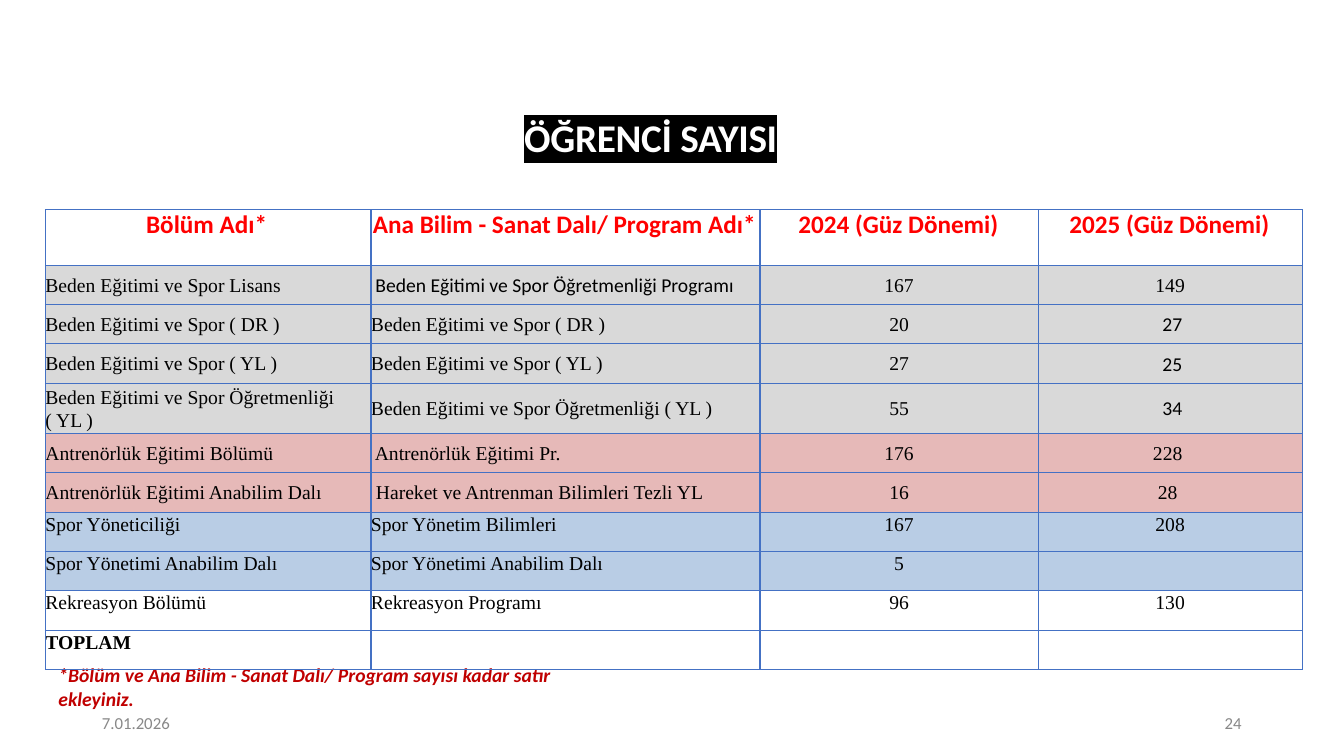
from lxml import etree
from pptx import Presentation
from pptx.dml.color import RGBColor
from pptx.enum import text
from pptx.oxml import ns
from pptx.util import Pt

WHITE = RGBColor(255, 255, 255)
BLACK = RGBColor(0, 0, 0)
RED = RGBColor(255, 0, 0)
DARK = RGBColor(0xC0, 0, 0)
GREY = RGBColor(0x88, 0x88, 0x88)
BLUE = RGBColor(0x44, 0x71, 0xC4)
SILVER = RGBColor(0xD9, 0xD9, 0xD9)
PINK = RGBColor(0xE6, 0xB9, 0xB8)
SKY = RGBColor(0xB9, 0xCD, 0xE5)

SANS, SERIF = "Calibri", "Times New Roman"
LEFT, MID = text.PP_ALIGN.LEFT, text.PP_ALIGN.CENTER
TOP, CENTRE = text.MSO_ANCHOR.TOP, text.MSO_ANCHOR.MIDDLE

WIDTHS = [232.6, 277.9, 198.7, 188.6]
HEADS = [("Bölüm Adı*", 72), ("Ana Bilim - Sanat Dalı/ Program Adı*", 1.4),
         ("2024 (Güz Dönemi)", 27.4), ("2025 (Güz Dönemi)", 22.3)]
ROWS = [
    (SILVER, CENTRE, ["Beden Eğitimi ve Spor Lisans",
                      " Beden Eğitimi ve Spor Öğretmenliği Programı", "167", "149"]),
    (SILVER, CENTRE, ["Beden Eğitimi ve Spor ( DR )",
                      "Beden Eğitimi ve Spor ( DR )", "20", " 27"]),
    (SILVER, CENTRE, ["Beden Eğitimi ve Spor ( YL )",
                      "Beden Eğitimi ve Spor ( YL )", "27", " 25"]),
    (SILVER, CENTRE, ["Beden Eğitimi ve Spor Öğretmenliği ( YL )",
                      "Beden Eğitimi ve Spor Öğretmenliği ( YL )", "55", " 34"]),
    (PINK, CENTRE, ["Antrenörlük Eğitimi Bölümü",
                    " Antrenörlük Eğitimi Pr.", "176", "228 "]),
    (PINK, CENTRE, ["Antrenörlük Eğitimi Anabilim Dalı",
                    " Hareket ve Antrenman Bilimleri Tezli YL", "16", "28 "]),
    (SKY, TOP, ["Spor Yöneticiliği", "Spor Yönetim Bilimleri", "167", "208"]),
    (SKY, TOP, ["Spor Yönetimi Anabilim Dalı", "Spor Yönetimi Anabilim Dalı", "5", ""]),
    (None, TOP, ["Rekreasyon Bölümü", "Rekreasyon Programı", "96", "130"]),
    (None, TOP, ["TOPLAM", "", "", ""]),
]
SANS_CELLS = {(1, 1), (2, 3), (3, 3), (4, 3)}


def style(para, words, size, color, face=SANS, bold=False, align=LEFT, indent=0):
    para.text = words
    para.alignment = align
    if indent:
        props = para._p.get_or_add_pPr()
        props.set("marL", str(Pt(indent)))
        props.set("indent", "0")
    for run in para.runs:
        font = run.font
        font.size, font.name, font.bold = Pt(size), face, bold
        font.color.rgb = color


def pad(frame, top=0):
    frame.margin_left = frame.margin_right = frame.margin_bottom = 0
    frame.margin_top = Pt(top)


def label(slide, words, left, top, width, height, size, color, indent, bold=False):
    box = slide.shapes.add_textbox(Pt(left), Pt(top), Pt(width), Pt(height))
    frame = box.text_frame
    frame.word_wrap = True
    pad(frame)
    para = frame.paragraphs[0]
    style(para, words, size, color, bold=bold, indent=indent)
    return para


def heading(slide):
    title = slide.shapes.title
    title.left, title.top = Pt(90), Pt(64.8)
    title.width, title.height = Pt(738.7), Pt(49.7)
    title.fill.solid()
    title.fill.fore_color.rgb = WHITE
    frame = title.text_frame
    frame.vertical_anchor = TOP
    frame.word_wrap = True
    pad(frame, 15.8)
    para = frame.paragraphs[0]
    style(para, "ÖĞRENCİ SAYISI", 28, WHITE, bold=True, indent=284.4)
    props = para.runs[0]._r.get_or_add_rPr()
    props.set("spc", "-20")
    mark = etree.Element(ns.qn("a:highlight"))
    etree.SubElement(mark, ns.qn("a:srgbClr"), val=str(BLACK))
    props.find(ns.qn("a:solidFill")).addnext(mark)


def border(cell):
    props = cell._tc.get_or_add_tcPr()
    for side in ("lnL", "lnR", "lnT", "lnB"):
        line = etree.SubElement(props, ns.qn("a:" + side), w=str(Pt(1)))
        fill = etree.SubElement(line, ns.qn("a:solidFill"))
        etree.SubElement(fill, ns.qn("a:srgbClr"), val=str(BLUE))


def paint(cell, color, anchor):
    pad(cell)
    cell.vertical_anchor = anchor
    border(cell)
    if color is None:
        cell.fill.background()
    else:
        cell.fill.solid()
        cell.fill.fore_color.rgb = color


def roster(slide):
    high = [39.6] + [28.1] * len(ROWS)
    high[4] = 33.8
    table = slide.shapes.add_table(len(high), len(WIDTHS), Pt(32.4), Pt(149.8),
                                   Pt(sum(WIDTHS)), Pt(sum(high))).table
    table.first_row = table.horz_banding = False
    for col, width in zip(table.columns, WIDTHS):
        col.width = Pt(width)
    for row, height in zip(table.rows, high):
        row.height = Pt(height)
    for c, (words, indent) in enumerate(HEADS):
        cell = table.cell(0, c)
        paint(cell, None, TOP)
        style(cell.text_frame.paragraphs[0], words, 18, RED, bold=True, indent=indent)
    for r, (color, anchor, items) in enumerate(ROWS, 1):
        for c, words in enumerate(items):
            cell = table.cell(r, c)
            paint(cell, color, anchor)
            para = cell.text_frame.paragraphs[0]
            para.line_spacing = 1.07
            style(para, words, 14, BLACK, SANS if (r, c) in SANS_CELLS else SERIF,
                  r == len(ROWS), MID if c > 1 else LEFT)


def main():
    deck = Presentation()
    deck.slide_width, deck.slide_height = Pt(960), Pt(540)
    slide = deck.slides.add_slide(deck.slide_layouts[5])
    heading(slide)
    label(slide, "7.01.2026", 72, 509, 51.1, 14.4, 12, GREY, 0.7)
    label(slide, "24", 872.6, 509, 16.6, 14.4, 12, GREY, 2.2)
    note = label(slide, "*Bölüm ve Ana Bilim - Sanat Dalı/ Program sayısı kadar satır ekleyiniz.",
                 41, 473.8, 403, 15.8, 14, DARK, 0.7, True)
    note.runs[0].font.italic = True
    roster(slide)
    deck.save("out.pptx")


if __name__ == "__main__":
    main()
